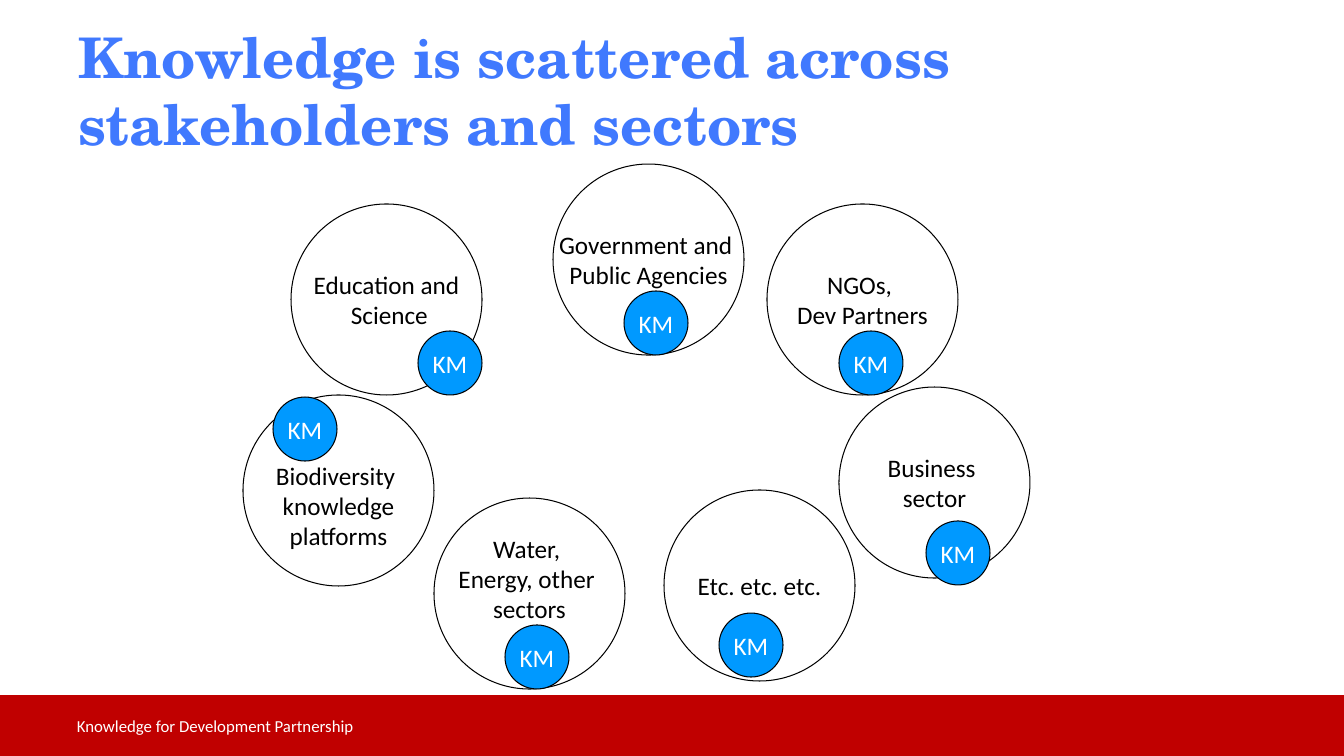
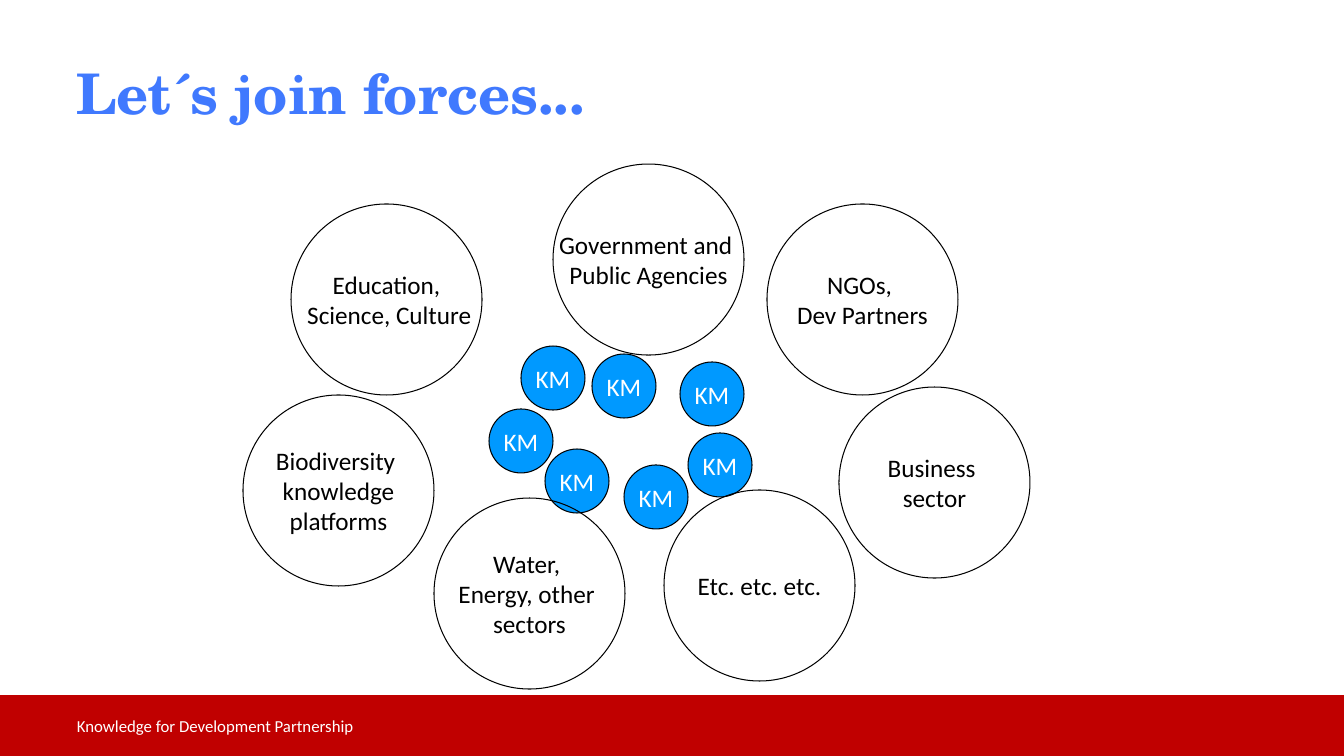
from dataclasses import dataclass

from pptx import Presentation
from pptx.dml.color import RGBColor
from pptx.enum.shapes import MSO_SHAPE
from pptx.enum.text import MSO_ANCHOR, MSO_AUTO_SIZE, PP_ALIGN
from pptx.util import Emu, Pt

SLIDE_WIDTH, SLIDE_HEIGHT = 1344, 756
TITLE_ONLY = 5


@dataclass(frozen=True)
class Theme:
    title_color: RGBColor = RGBColor(0x40, 0x79, 0xFE)
    band_color: RGBColor = RGBColor(0xC0, 0x00, 0x00)
    knowledge_color: RGBColor = RGBColor(0x00, 0x99, 0xFF)
    ink: RGBColor = RGBColor(0x00, 0x00, 0x00)
    paper: RGBColor = RGBColor(0xFF, 0xFF, 0xFF)
    title_font: str = "TeX Gyre Schola"
    body_font: str = "Calibri"
    title_size: int = 40
    body_size: int = 18
    footer_size: int = 12
    outline: float = 0.75


def px(length):
    return Emu(round(length * 12192000 / SLIDE_WIDTH))


class Deck:
    def __init__(self, theme):
        self.theme = theme
        self.presentation = Presentation()
        self.presentation.slide_width = px(SLIDE_WIDTH)
        self.presentation.slide_height = px(SLIDE_HEIGHT)
        self.slide = None

    def add_slide(self, title, left, top, width):
        layout = self.presentation.slide_layouts[TITLE_ONLY]
        self.slide = self.presentation.slides.add_slide(layout)
        self.add_band()
        self.add_title(title, left, top, width)
        self.add_footer("Knowledge for Development Partnership")

    def add_lines(self, text_frame, lines, font_name, size, color, align, bold=False):
        text_frame.auto_size = MSO_AUTO_SIZE.NONE
        text_frame.vertical_anchor = MSO_ANCHOR.MIDDLE
        paragraph = text_frame.paragraphs[0]
        paragraph.alignment = align
        for index, line in enumerate(lines):
            if index:
                paragraph.add_line_break()
            run = paragraph.add_run()
            run.text = line
            run.font.name = font_name
            run.font.size = Pt(size)
            run.font.bold = bold
            run.font.color.rgb = color

    def add_title(self, title, left, top, width):
        theme = self.theme
        shape = self.slide.shapes.title
        shape.left, shape.top = px(left), px(top)
        shape.width, shape.height = px(width), px(106)
        shape.text_frame.word_wrap = True
        self.add_lines(shape.text_frame, [title], theme.title_font, theme.title_size,
                       theme.title_color, PP_ALIGN.LEFT, bold=True)

    def add_band(self):
        shape = self.slide.shapes.add_shape(
            MSO_SHAPE.RECTANGLE, 0, px(695), px(SLIDE_WIDTH), px(SLIDE_HEIGHT - 695))
        shape.shadow.inherit = False
        shape.fill.solid()
        shape.fill.fore_color.rgb = self.theme.band_color
        shape.line.fill.background()

    def add_footer(self, text):
        theme = self.theme
        shape = self.slide.shapes.add_textbox(px(67), px(706), px(869), px(40))
        shape.text_frame.word_wrap = True
        self.add_lines(shape.text_frame, [text], theme.body_font, theme.footer_size,
                       theme.paper, PP_ALIGN.LEFT)

    def add_circle(self, left, top, diameter, lines, color, fill=None, shift=0):
        theme = self.theme
        shape = self.slide.shapes.add_shape(
            MSO_SHAPE.OVAL, px(left), px(top), px(diameter), px(diameter))
        shape.shadow.inherit = False
        if fill is None:
            shape.fill.background()
        else:
            shape.fill.solid()
            shape.fill.fore_color.rgb = fill
        shape.line.color.rgb = theme.ink
        shape.line.width = Pt(theme.outline)
        text_frame = shape.text_frame
        text_frame.word_wrap = False
        text_frame.margin_top = px(max(0, 2 * shift))
        text_frame.margin_bottom = px(max(0, -2 * shift))
        self.add_lines(text_frame, lines, theme.body_font, theme.body_size,
                       color, PP_ALIGN.CENTER)

    def add_sector(self, left, top, lines, shift=0):
        self.add_circle(left, top, 191, lines, self.theme.ink, shift=shift)

    def add_knowledge(self, left, top):
        self.add_circle(left, top, 64, ["KM"], self.theme.paper,
                        fill=self.theme.knowledge_color)


SECTOR_PLACES = {
    "education": (291, 204),
    "biodiversity": (243, 395),
    "government": (553, 164),
    "water": (434, 498),
    "partners": (767, 204),
    "business": (839, 387),
    "others": (664, 490),
}
SECTOR_LINES = {
    "education": ["Education and", " Science"],
    "biodiversity": ["Biodiversity ", "knowledge", "platforms"],
    "government": ["Government and ", "Public Agencies"],
    "water": ["Water, ", "Energy, other ", "sectors"],
    "partners": ["NGOs, ", "Dev Partners"],
    "business": ["Business ", "sector"],
    "others": ["Etc. etc. etc."],
}
JOINED_LINES = SECTOR_LINES | {"education": ["Education,", " Science, Culture"]}
SCATTERED_SHIFTS = {"biodiversity": 15, "water": -15}
SCATTERED_KNOWLEDGE = [(418, 331), (273, 397), (505, 625), (839, 331),
                       (624, 291), (926, 521), (719, 613)]
JOINED_KNOWLEDGE = [(521, 346), (489, 409), (545, 449), (680, 362),
                    (592, 354), (688, 433), (624, 465)]


def add_sectors(deck, sector_lines, shifts):
    for name, (left, top) in SECTOR_PLACES.items():
        deck.add_sector(left, top, sector_lines[name], shifts.get(name, 0))


def add_knowledge_circles(deck, places):
    for left, top in places:
        deck.add_knowledge(left, top)


def main():
    deck = Deck(Theme())

    deck.add_slide("Knowledge is scattered across stakeholders and sectors", 68, 37, 1022)
    add_sectors(deck, SECTOR_LINES, SCATTERED_SHIFTS)
    add_knowledge_circles(deck, SCATTERED_KNOWLEDGE)

    deck.add_slide("Let´s join forces...", 66, 39, 1055)
    add_knowledge_circles(deck, JOINED_KNOWLEDGE)
    add_sectors(deck, JOINED_LINES, {})

    deck.presentation.save("out.pptx")


if __name__ == "__main__":
    main()
